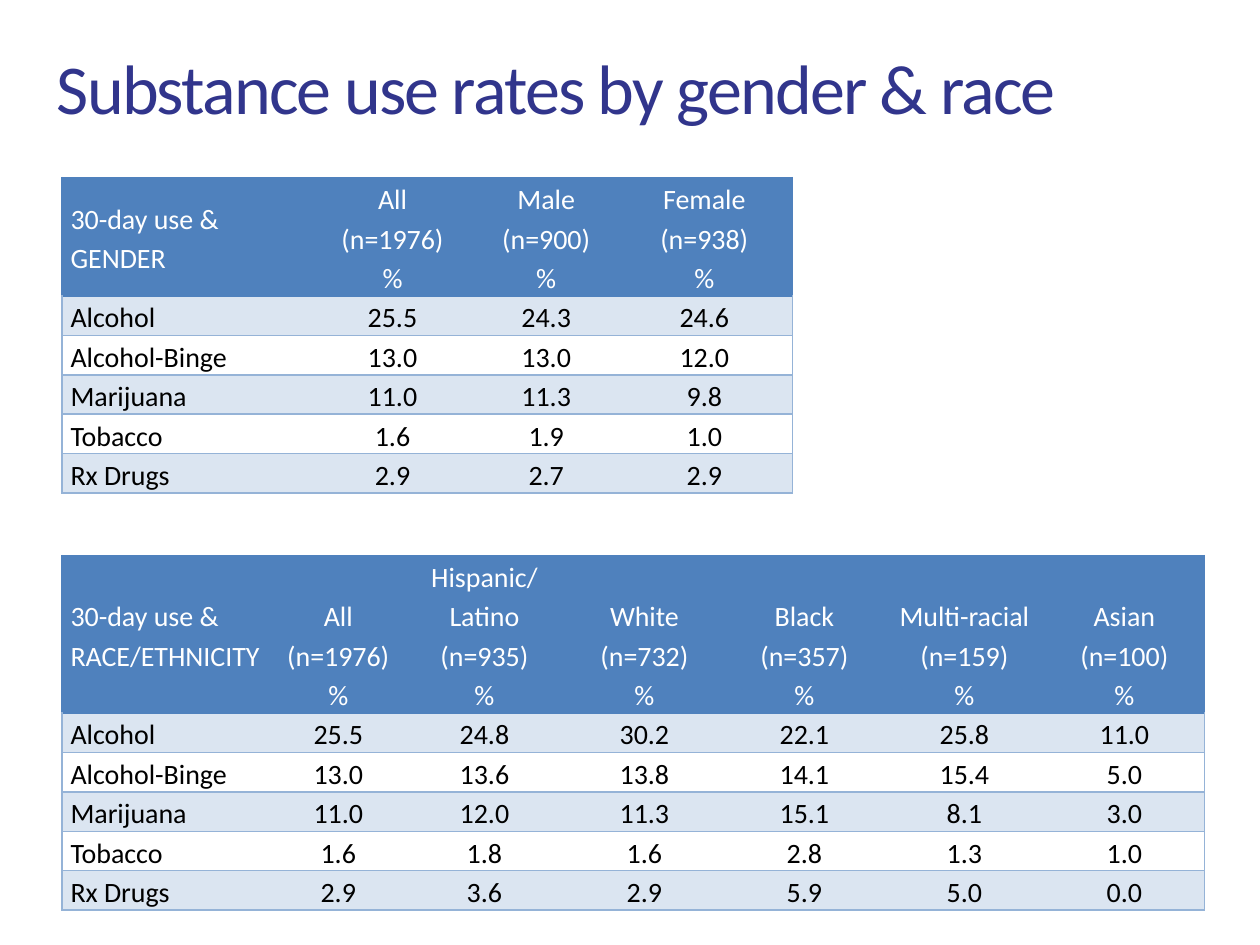
from lxml.etree import SubElement
from pptx import Presentation
from pptx.dml.color import RGBColor
from pptx.enum.text import MSO_ANCHOR, PP_ALIGN
from pptx.oxml.ns import qn
from pptx.util import Inches, Pt

FONT = "Calibri"
NAVY, BLUE, LIGHT_BLUE, PALE_BLUE = "31358C", "4F81BD", "95B3D7", "DBE5F1"
WHITE, BLACK = "FFFFFF", "000000"
NO_STYLE_NO_GRID = "{2D5ABB26-0587-4C30-8999-92F81FD0307C}"
ROW_HEIGHT = 0.31

TITLE = "Substance use rates by gender & race"
SUBSTANCES = ["Alcohol", "Alcohol-Binge", "Marijuana", "Tobacco", "Rx Drugs"]
ALL_RATES = ("All\n(n=1976)\n%", ["25.5", "13.0", "11.0", "1.6", "2.9"])
TABLES = [
    {
        "top": 4.41,
        "header_height": 1.25,
        "widths": [1.67, 1.05] + [1.27] * 5,
        "columns": [
            ("30-day use & RACE/ETHNICITY", SUBSTANCES),
            ALL_RATES,
            ("Hispanic/ Latino\n(n=935)\n%", ["24.8", "13.6", "12.0", "1.8", "3.6"]),
            ("White (n=732)\n%", ["30.2", "13.8", "11.3", "1.6", "2.9"]),
            ("Black\n(n=357)\n%", ["22.1", "14.1", "15.1", "2.8", "5.9"]),
            ("Multi-racial\n(n=159)\n%", ["25.8", "15.4", "8.1", "1.3", "5.0"]),
            ("Asian\n(n=100)\n%", ["11.0", "5.0", "3.0", "1.0", "0.0"]),
        ],
    },
    {
        "top": 1.41,
        "header_height": 0.94,
        "widths": [1.96, 1.33, 1.11, 1.4],
        "columns": [
            ("30-day use & GENDER", SUBSTANCES),
            ALL_RATES,
            ("Male\n(n=900)\n%", ["24.3", "13.0", "11.3", "1.9", "2.7"]),
            ("Female\n(n=938)\n%", ["24.6", "12.0", "9.8", "1.0", "2.9"]),
        ],
    },
]


def rgb(color):
    return RGBColor.from_string(color)


def write_text(text_frame, text, size, color, align=PP_ALIGN.LEFT, line_spacing=None):
    """Write one paragraph per line of text, all in the same format."""
    text_frame.text = text
    for paragraph in text_frame.paragraphs:
        paragraph.alignment = align
        paragraph.line_spacing = line_spacing
        for run in paragraph.runs:
            run.font.name = FONT
            run.font.size = Pt(size)
            run.font.color.rgb = rgb(color)


def set_borders(cell, borders):
    """Draw 1 pt borders; borders maps L, R, T, B to a colour, in that order."""
    properties = cell._tc.get_or_add_tcPr()
    for side, color in borders.items():
        line = SubElement(properties, qn(f"a:ln{side}"), w=str(Pt(1)))
        fill = SubElement(line, qn("a:solidFill"))
        SubElement(fill, qn("a:srgbClr"), val=color)


def format_cell(cell, text, row, column, last_column):
    is_header, is_label = row == 0, column == 0
    edge = BLUE if is_header else LIGHT_BLUE
    borders = {}
    if is_label:
        borders["L"] = edge
    if column == last_column:
        borders["R"] = edge
    borders["T"] = BLUE if row <= 1 else LIGHT_BLUE
    borders["B"] = edge
    set_borders(cell, borders)

    if is_header or row % 2:
        cell.fill.solid()
        cell.fill.fore_color.rgb = rgb(BLUE if is_header else PALE_BLUE)
    else:
        cell.fill.background()

    cell.margin_left = cell.margin_right = Inches(0.07)
    cell.margin_top = cell.margin_bottom = 0
    if is_header:
        cell.vertical_anchor = MSO_ANCHOR.MIDDLE if is_label else MSO_ANCHOR.BOTTOM
    else:
        cell.vertical_anchor = MSO_ANCHOR.TOP
    write_text(cell.text_frame, text, size=16, color=WHITE if is_header else BLACK,
               align=PP_ALIGN.LEFT if is_label else PP_ALIGN.CENTER, line_spacing=1.15)


def add_rate_table(slide, top, header_height, widths, columns):
    heights = [header_height] + [ROW_HEIGHT] * len(SUBSTANCES)
    table = slide.shapes.add_table(
        len(heights), len(widths), Inches(0.49), Inches(top),
        Inches(sum(widths)), Inches(sum(heights))).table
    table._tbl.tblPr.find(qn("a:tableStyleId")).text = NO_STYLE_NO_GRID
    table.horz_banding = False
    for table_row, height in zip(table.rows, heights):
        table_row.height = Inches(height)
    for column, (width, (heading, values)) in enumerate(zip(widths, columns)):
        table.columns[column].width = Inches(width)
        for row, text in enumerate([heading, *values]):
            format_cell(table.cell(row, column), text, row, column, len(widths) - 1)


def main():
    presentation = Presentation()
    presentation.slide_width, presentation.slide_height = Inches(10), Inches(7.5)
    slide = presentation.slides.add_slide(presentation.slide_layouts[5])

    title = slide.shapes.title
    title.left, title.top = Inches(0.35), Inches(0.15)
    title.width, title.height = Inches(9), Inches(1.08)
    title.text_frame.vertical_anchor = MSO_ANCHOR.MIDDLE
    write_text(title.text_frame, TITLE, size=40, color=NAVY)
    title.text_frame.paragraphs[0].runs[0].font._element.set("spc", "-100")

    for rate_table in TABLES:
        add_rate_table(slide, **rate_table)
    presentation.save("out.pptx")


if __name__ == "__main__":
    main()
